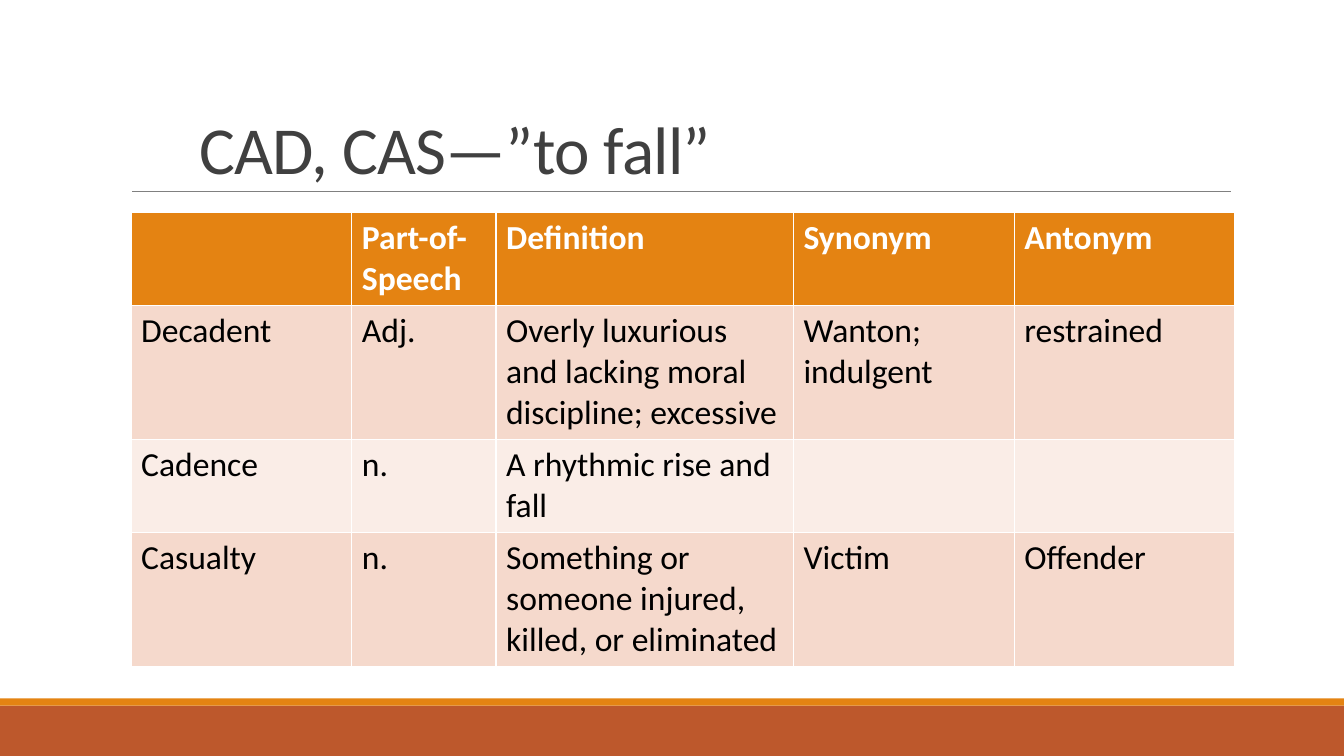
from pptx import Presentation
from pptx.dml.color import RGBColor
from pptx.enum.shapes import MSO_CONNECTOR, MSO_SHAPE
from pptx.enum.text import MSO_ANCHOR
from pptx.oxml.ns import qn
from pptx.util import Inches, Pt
from lxml.etree import SubElement

TITLE = "CAD, CAS—”to fall”"
HEADINGS = ("", "Part-of-Speech", "Definition", "Synonym", "Antonym")
WORDS = (
    ("Decadent", "Adj.", "Overly luxurious and lacking moral discipline; excessive",
     "Wanton; indulgent", "restrained"),
    ("Cadence", "n.", "A rhythmic rise and fall", "", ""),
    ("Casualty", "n.", "Something or someone injured, killed, or eliminated",
     "Victim", "Offender"),
)
COLUMN_WIDTHS = (2.19, 1.43, 2.95, 2.19, 2.19)
LINES_PER_ROW = (2, 3, 2, 3)
LINE_HEIGHT, CELL_PADDING = 0.41, 0.1

ORANGE = RGBColor(0xE4, 0x83, 0x12)
RUST = RGBColor(0xBD, 0x58, 0x2C)
PEACH = RGBColor(0xF5, 0xD9, 0xCC)
BLUSH = RGBColor(0xFA, 0xED, 0xE7)
WHITE = RGBColor(0xFF, 0xFF, 0xFF)
BLACK = RGBColor(0, 0, 0)
CHARCOAL = RGBColor(0x40, 0x40, 0x40)
GREY = RGBColor(0x80, 0x80, 0x80)

TITLE_FORMAT = {"name": "Calibri", "size": Pt(48)}
HEADING_FORMAT = {"name": "Calibri", "size": Pt(24), "bold": True}
WORD_FORMAT = {"name": "Calibri", "size": Pt(24), "bold": False}

WIDTH, HEIGHT = 13.33, 7.5
FOOTER_BANDS = ((7, 0.5, RUST), (6.93, 0.07, ORANGE))


def style(font, values, color):
    for key, value in values.items():
        setattr(font, key, value)
    font.color.rgb = color


deck = Presentation()
deck.slide_width, deck.slide_height = Inches(WIDTH), Inches(HEIGHT)
slide = deck.slides.add_slide(deck.slide_layouts[6])

for top, height, color in FOOTER_BANDS:
    band = slide.shapes.add_shape(
        MSO_SHAPE.RECTANGLE, 0, Inches(top), Inches(WIDTH), Inches(height))
    band.shadow.inherit = False
    band.fill.solid()
    band.fill.fore_color.rgb = color
    band.line.fill.background()

rule = slide.shapes.add_connector(
    MSO_CONNECTOR.STRAIGHT, Inches(1.31), Inches(1.9), Inches(12.21), Inches(1.9))
rule.line.color.rgb = GREY
rule.line.width = Pt(0.5)
SubElement(rule.element.spPr, qn("a:effectLst"))

title = slide.shapes.add_textbox(
    Inches(1.88), 0, Inches(10.96), Inches(1.92)).text_frame
title.word_wrap = True
title.vertical_anchor = MSO_ANCHOR.BOTTOM
heading = title.paragraphs[0]
heading.line_spacing = 0.85
heading_run = heading.add_run()
heading_run.text = TITLE
style(heading_run.font, TITLE_FORMAT, CHARCOAL)
heading_run.font._element.set("spc", "-50")

row_heights = [CELL_PADDING + LINE_HEIGHT * lines for lines in LINES_PER_ROW]
vocabulary = slide.shapes.add_table(
    len(row_heights), len(COLUMN_WIDTHS), Inches(1.3), Inches(2.11),
    Inches(sum(COLUMN_WIDTHS)), Inches(sum(row_heights))).table
for column, width in zip(vocabulary.columns, COLUMN_WIDTHS):
    column.width = Inches(width)
for row, height in zip(vocabulary.rows, row_heights):
    row.height = Inches(height)

for row_index, entries in enumerate((HEADINGS, *WORDS)):
    if row_index == 0:
        fill, color, text_format = ORANGE, WHITE, HEADING_FORMAT
    else:
        fill = PEACH if row_index % 2 else BLUSH
        color, text_format = BLACK, WORD_FORMAT
    for column_index, entry in enumerate(entries):
        cell = vocabulary.cell(row_index, column_index)
        cell.fill.solid()
        cell.fill.fore_color.rgb = fill
        if entry:
            run = cell.text_frame.paragraphs[0].add_run()
            run.text = entry
            style(run.font, text_format, color)

deck.save("out.pptx")
